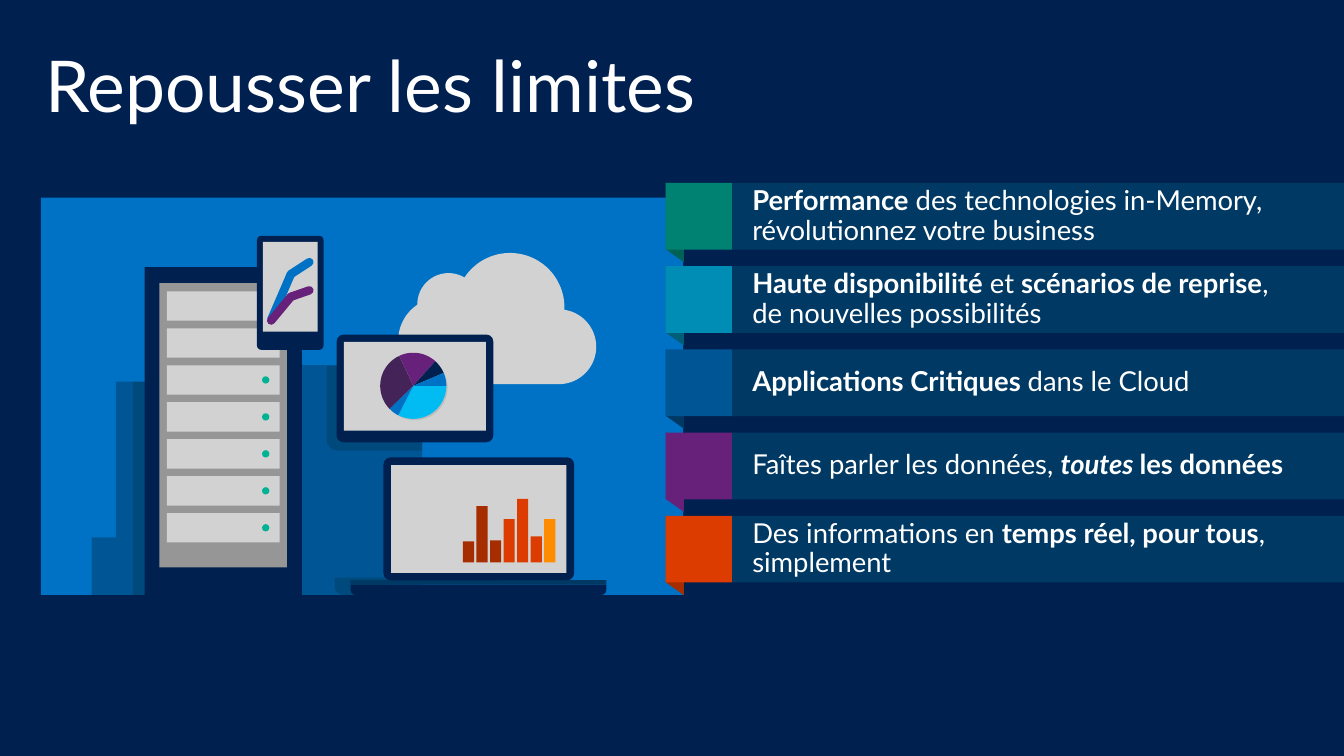
import math

import pptx
import pptx.dml.color
import pptx.enum.shapes
import pptx.enum.text
import pptx.oxml
import pptx.oxml.ns
import pptx.util

Pt = pptx.util.Pt
SHAPE = pptx.enum.shapes.MSO_SHAPE
qn = pptx.oxml.ns.qn

FONT = "Lato"
NAVY, BLUE, SHADE, BAND = "002050", "0072C6", "005694", "003963"
GREY, RACK_GREY, LED_GREEN = "D2D2D2", "969696", "00B294"
PURPLE, PLUM, CYAN = "68217A", "442359", "00BCF2"
RUST, ORANGE, AMBER = "A52D00", "DC3C00", "FF8C00"
WHITE, BLACK = "FFFFFF", "000000"

# Square colour, fold colour, then runs with their style (b bold, i italic)
MESSAGES = [
    ("008272", "006256", [("Performance", "b"),
                          (" des technologies in-Memory, révolutionnez votre business", "")]),
    ("008DB5", "005E79", [("Haute disponibilité", "b"), (" et ", ""),
                          ("scénarios de reprise", "b"), (",", ""), ("\n", ""),
                          ("de nouvelles possibilités", "")]),
    (SHADE, BAND, [("Applications Critiques ", "b"), ("dans le Cloud", "")]),
    (PURPLE, PURPLE, [("Faîtes parler les données, ", ""), ("toutes ", "bi"),
                      ("les données", "b")]),
    (ORANGE, RUST, [("Des informations en ", ""), ("temps réel, pour tous", "b"),
                    (", simplement", "")]),
]


def rgb(value):
    return pptx.dml.color.RGBColor.from_string(value)


def paint(shape, color, opacity=100):
    shape.shadow.inherit = False
    shape.line.fill.background()
    shape.fill.solid()
    shape.fill.fore_color.rgb = rgb(color)
    if opacity < 100:
        tint = shape._element.spPr.find(qn("a:solidFill"))[0]
        alpha = pptx.oxml.parse_xml(
            f'<a:alpha {pptx.oxml.ns.nsdecls("a")} val="{opacity * 1000}"/>')
        tint.append(alpha)


def add_block(slide, kind, left, top, width, height, color, opacity=100, adjustments=()):
    block = slide.shapes.add_shape(kind, Pt(left), Pt(top), Pt(width), Pt(height))
    for index, value in enumerate(adjustments):
        block.adjustments[index] = value
    paint(block, color, opacity)
    return block


def add_rect(slide, left, top, width, height, color, opacity=100):
    return add_block(slide, SHAPE.RECTANGLE, left, top, width, height, color, opacity)


def arc(x, y, radius, start, end):
    """Points along a circle, in degrees clockwise from the right."""
    steps = max(4, round((end - start) / 4))
    angles = [math.radians(start + (end - start) * i / steps) for i in range(steps + 1)]
    return [(x + radius * math.cos(a), y + radius * math.sin(a)) for a in angles]


def add_outline(slide, points, color):
    corners = [(Pt(x), Pt(y)) for x, y in points]
    builder = slide.shapes.build_freeform(*corners[0], scale=1.0)
    builder.add_line_segments(corners[1:], close=True)
    paint(builder.convert_to_shape(), color)


def add_stroke(slide, start, end, color):
    stroke = slide.shapes.add_connector(
        pptx.enum.shapes.MSO_CONNECTOR.STRAIGHT, *map(Pt, start + end))
    stroke.line.color.rgb = rgb(color)
    stroke.line.width = Pt(6)
    properties = stroke._element.spPr
    properties.find(qn("a:ln")).set("cap", "rnd")
    properties.append(pptx.oxml.parse_xml(f'<a:effectLst {pptx.oxml.ns.nsdecls("a")}/>'))


def add_device(slide, left, top, width, height, radius, bezel, screen_height):
    add_block(slide, SHAPE.ROUNDED_RECTANGLE, left, top, width, height, NAVY,
              adjustments=[radius / min(width, height)])
    add_rect(slide, left + bezel, top + bezel, width - 2 * bezel, screen_height, GREY)


def add_device_shadow(slide, left, top, width, height, radius):
    add_block(slide, SHAPE.ROUND_2_DIAG_RECTANGLE, left, top, width, height, BLACK, 15,
              [0, radius / min(width, height)])


def set_margins(frame, left, right):
    frame.word_wrap = True
    frame.margin_left, frame.margin_right = Pt(left), Pt(right)
    frame.margin_top = frame.margin_bottom = Pt(7.2)


def style_paragraph(paragraph, size):
    paragraph.alignment = pptx.enum.text.PP_ALIGN.LEFT
    paragraph.font.name = FONT
    paragraph.font.size = Pt(size)
    paragraph.font.color.rgb = rgb(WHITE)


def add_title(slide, text):
    frame = slide.shapes.add_textbox(Pt(20.9), Pt(22.3), Pt(917.3), Pt(72.7)).text_frame
    set_margins(frame, 11.5, 11.5)
    frame.text = text
    style_paragraph(frame.paragraphs[0], 51)


def add_cloud(slide):
    add_outline(slide, arc(315.4, 243.4, 31, 90, 236) + arc(320.4, 217.4, 22.3, 180, 299)
                + arc(364.3, 219.6, 38.9, 213, 363) + arc(399.2, 247.7, 26.7, 278, 450), GREY)


def add_server(slide):
    add_rect(slide, 206.6, 260.8, 95, 164.2, SHADE)
    add_rect(slide, 65.5, 383.8, 18, 41.2, SHADE)
    add_rect(slide, 82.8, 272.6, 154, 152.4, SHADE)
    add_rect(slide, 103.3, 190.8, 112.3, 234.2, NAVY)
    add_rect(slide, 113.9, 202.2, 91, 203.2, RACK_GREY)
    for tray in range(7):
        top = 208.1 + 26.4 * tray
        add_rect(slide, 119.2, top, 80.6, 21, GREY)
        if tray >= 2:  # the phone covers the first two lights
            add_block(slide, SHAPE.OVAL, 187.2, top + 7.9, 5.2, 5.2, LED_GREEN)
    add_rect(slide, 95, 272.6, 8.3, 152.4, BLACK, 15)


def add_laptop(slide):
    add_device_shadow(slide, 239, 412.6, 41, 12.4, 7)
    add_block(slide, SHAPE.ROUND_2_SAME_RECTANGLE, 250.4, 417.6, 182.7, 7.4, NAVY,
              adjustments=[0, 0.5])
    add_rect(slide, 250.4, 414.4, 182.7, 3.2, BAND)
    add_device(slide, 273.9, 326.7, 136.2, 87.8, 5, 5.5, 77)
    heights = [15.1, 40.3, 15.8, 31, 45.4, 18.7, 31]
    colors = [RUST] * 3 + [ORANGE] * 3 + [AMBER]
    for index, (height, color) in enumerate(zip(heights, colors)):
        add_rect(slide, 330.7 + 9.67 * index, 401.8 - height, 8, height, color)


def add_phone(slide):
    add_device(slide, 183.6, 168.5, 47.5, 81.4, 3, 4.2, 64.2)
    for color, start, bend, end in [
            (BLUE, (193.7, 228.5), (207.8, 195.8), (221, 187.2)),
            (PURPLE, (193.7, 229), (207.8, 212), (221, 207.4))]:
        add_stroke(slide, start, bend, color)
        add_stroke(slide, bend, end, color)


def add_tablet(slide):
    add_device_shadow(slide, 233.3, 261.4, 68.4, 60.4, 8)
    add_device(slide, 240.4, 239, 112, 77, 5, 5.2, 63.4)
    add_block(slide, SHAPE.OVAL, 272.9, 253.4, 46.8, 46.8, BLACK, 10)
    center = (295.2, 275.6)
    slices = [(0, 117, CYAN), (117, 136, BLUE), (136, 245, PLUM),
              (245, 312, PURPLE), (312, 337, NAVY), (337, 360, BLUE)]
    for start, end, color in slices:
        add_outline(slide, [center] + arc(*center, 23.6, start, end), color)


def add_message(slide, top, square_color, fold_color, runs):
    fold = add_block(slide, SHAPE.PARALLELOGRAM, 453.6, top + 21.7, 56.9, 12.8, fold_color,
                     adjustments=[0.708])
    fold.rotation = 90
    add_rect(slide, 475.4, top, 47.6, 47.6, square_color)
    band = add_rect(slide, 523, top, 437, 47.6, BAND)
    frame = band.text_frame
    set_margins(frame, 14.4, 7.2)
    frame.vertical_anchor = pptx.enum.text.MSO_ANCHOR.MIDDLE
    paragraph = frame.paragraphs[0]
    paragraph.line_spacing = 0.9
    paragraph.space_after = Pt(5.9)
    style_paragraph(paragraph, 19.6)
    for text, style in runs:
        if text == "\n":
            paragraph.add_line_break()
            continue
        run = paragraph.add_run()
        run.text = text
        run.font.bold = "b" in style
        run.font.italic = "i" in style


def main():
    deck = pptx.Presentation()
    deck.slide_width, deck.slide_height = Pt(960), Pt(540)
    slide = deck.slides.add_slide(deck.slide_layouts[6])
    slide.background.fill.solid()
    slide.background.fill.fore_color.rgb = rgb(NAVY)

    add_rect(slide, 29.3, 141.2, 458.7, 283.8, BLUE)
    add_cloud(slide)
    add_server(slide)
    add_laptop(slide)
    add_phone(slide)
    add_tablet(slide)
    add_title(slide, "Repousser les limites")
    for row, message in enumerate(MESSAGES):
        add_message(slide, 130.7 + 59.45 * row, *message)
    deck.save("out.pptx")


if __name__ == "__main__":
    main()
